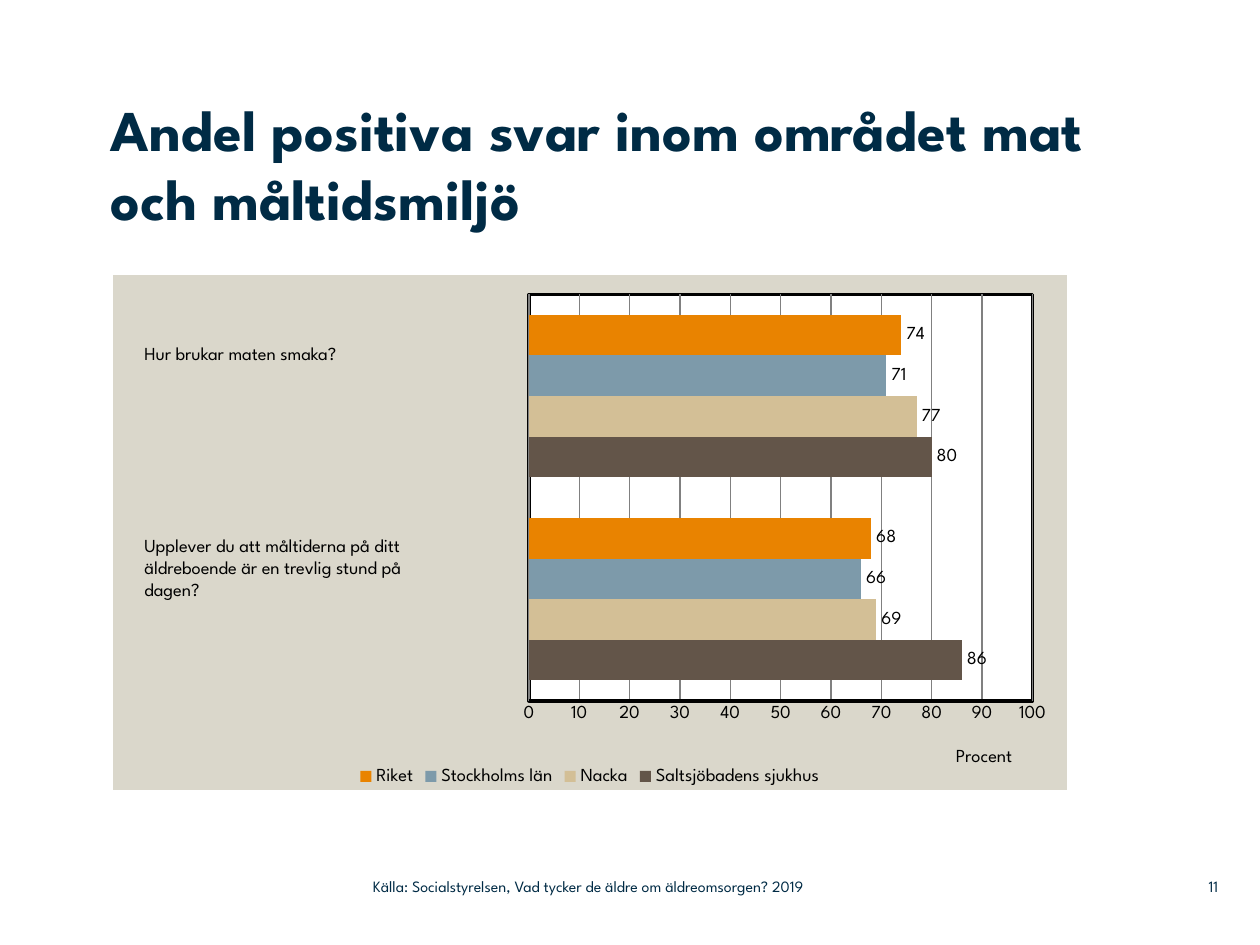
from lxml.etree import SubElement
from pptx import Presentation
from pptx.chart.data import CategoryChartData
from pptx.dml.color import RGBColor
from pptx.enum.chart import XL_CHART_TYPE, XL_LABEL_POSITION, XL_LEGEND_POSITION, XL_TICK_MARK
from pptx.enum.text import MSO_ANCHOR, PP_ALIGN
from pptx.oxml import parse_xml
from pptx.oxml.ns import nsdecls, qn
from pptx.util import Emu, Pt

FONT = "League Spartan"
NAVY, BLACK, WHITE, GRID, PANEL = "002B45", "000000", "FFFFFF", "808080", "DAD7CB"
BODY_SIZE = 10.5

TITLE = "Andel positiva svar inom området mat och måltidsmiljö"
SOURCE = "Källa: Socialstyrelsen, Vad tycker de äldre om äldreomsorgen? 2019"
QUESTIONS = [
    ((132, 336, 374, 35), ["Hur brukar maten smaka?"]),
    ((132, 528, 369, 79),
     ["Upplever du att måltiderna på ditt äldreboende är en trevlig stund på", "dagen?"]),
]
CATEGORIES = ["1", "2"]
SERIES = [
    ("Saltsjöbadens sjukhus", (86, 80), "635549"),
    ("Nacka", (69, 77), "D3BF96"),
    ("Stockholms län", (66, 71), "7D9AAA"),
    ("Riket", (68, 74), "E98300"),
]
CHART_AREA = (113, 275, 954, 515)
PLOT_LAYOUT = {"x": 0.436, "y": 0.038, "w": 0.528, "h": 0.789}
AXIS_TITLE_LAYOUT = {"x": 0.88, "y": 0.91}


def px(value):
    return Emu(round(value * 914400 / 126))


def color(hex_code):
    return RGBColor.from_string(hex_code)


def style(font, size, hex_code, bold=False):
    font.name, font.size, font.bold = FONT, Pt(size), bold
    font.color.rgb = color(hex_code)


def add_text(page, area, lines, size, hex_code, bold=False, inset=True,
             align=PP_ALIGN.LEFT, anchor=MSO_ANCHOR.TOP):
    frame = page.shapes.add_textbox(*map(px, area)).text_frame
    frame.word_wrap = True
    frame.vertical_anchor = anchor
    if not inset:
        frame.margin_left = frame.margin_right = frame.margin_top = frame.margin_bottom = 0
    frame.text = "\n".join(lines)
    for paragraph in frame.paragraphs:
        paragraph.alignment = align
        style(paragraph.font, size, hex_code, bold)


def set_layout(parent, position, inner=False):
    """Give a chart part a fixed place, in fractions of the chart area."""
    layout = parent.find(qn("c:layout"))
    if layout is None:
        layout = parse_xml(f"<c:layout {nsdecls('c')}/>")
        text = parent.find(qn("c:tx"))
        if text is None:
            parent.insert(0, layout)
        else:
            text.addnext(layout)
    manual = SubElement(layout, qn("c:manualLayout"))
    if inner:
        SubElement(manual, qn("c:layoutTarget")).set("val", "inner")
    for key in ("x", "y"):
        SubElement(manual, qn(f"c:{key}Mode")).set("val", "edge")
    for key, value in position.items():
        SubElement(manual, qn(f"c:{key}")).set("val", str(value))


def area_format(fill, line=""):
    outline = f'<a:solidFill><a:srgbClr val="{line}"/></a:solidFill>' if line else "<a:noFill/>"
    return parse_xml(
        f'<c:spPr {nsdecls("c", "a")}><a:solidFill><a:srgbClr val="{fill}"/></a:solidFill>'
        f'<a:ln w="{Pt(2)}">{outline}</a:ln></c:spPr>')


def add_bar_chart(page):
    data = CategoryChartData()
    data.categories = CATEGORIES
    for name, values, _ in SERIES:
        data.add_series(name, values)
    chart = page.shapes.add_chart(
        XL_CHART_TYPE.BAR_CLUSTERED, *map(px, CHART_AREA), data).chart
    chart.has_title = False
    style(chart.font, BODY_SIZE, BLACK)

    plot = chart.plots[0]
    plot.gap_width, plot.overlap, plot.vary_by_categories = 100, 0, False
    for series, (_, _, fill) in zip(plot.series, SERIES):
        series.format.fill.solid()
        series.format.fill.fore_color.rgb = color(fill)
        labels = series.data_labels
        labels.show_value = True
        labels.position = XL_LABEL_POSITION.OUTSIDE_END
        style(labels.font, BODY_SIZE, BLACK)

    chart.category_axis.visible = False
    axis = chart.value_axis
    axis.minimum_scale, axis.maximum_scale, axis.major_unit = 0, 100, 10
    axis.major_tick_mark = axis.minor_tick_mark = XL_TICK_MARK.NONE
    axis.format.line.color.rgb = color(BLACK)
    axis.format.line.width = Pt(2)
    grid = axis.major_gridlines.format.line
    grid.color.rgb, grid.width = color(GRID), Pt(0.75)
    style(axis.tick_labels.font, BODY_SIZE, BLACK)
    title = axis.axis_title
    title.text_frame.text = "Procent"
    style(title.text_frame.paragraphs[0].font, BODY_SIZE, BLACK)
    set_layout(title._element, AXIS_TITLE_LAYOUT)

    chart.has_legend = True
    chart.legend.position = XL_LEGEND_POSITION.BOTTOM
    chart.legend.include_in_layout = False
    style(chart.legend.font, BODY_SIZE, BLACK)

    root = chart._chartSpace
    plot_area = root.chart.plotArea
    set_layout(plot_area, PLOT_LAYOUT, inner=True)
    plot_area.append(area_format(WHITE, BLACK))
    root.chart.addnext(area_format(PANEL))


def main():
    deck = Presentation()
    deck.slide_width, deck.slide_height = px(1260), px(945)
    page = deck.slides.add_slide(deck.slide_layouts[6])
    add_bar_chart(page)
    add_text(page, (111, 94, 1061, 179), [TITLE], 33, NAVY, bold=True, inset=False)
    for area, lines in QUESTIONS:
        add_text(page, area, lines, BODY_SIZE, BLACK)
    add_text(page, (1159, 868, 59, 37), ["11"], 9, NAVY, inset=False,
             align=PP_ALIGN.RIGHT, anchor=MSO_ANCHOR.MIDDLE)
    add_text(page, (373, 868, 558, 37), [SOURCE], 9, NAVY, inset=False,
             anchor=MSO_ANCHOR.MIDDLE)
    deck.save("out.pptx")


if __name__ == "__main__":
    main()
